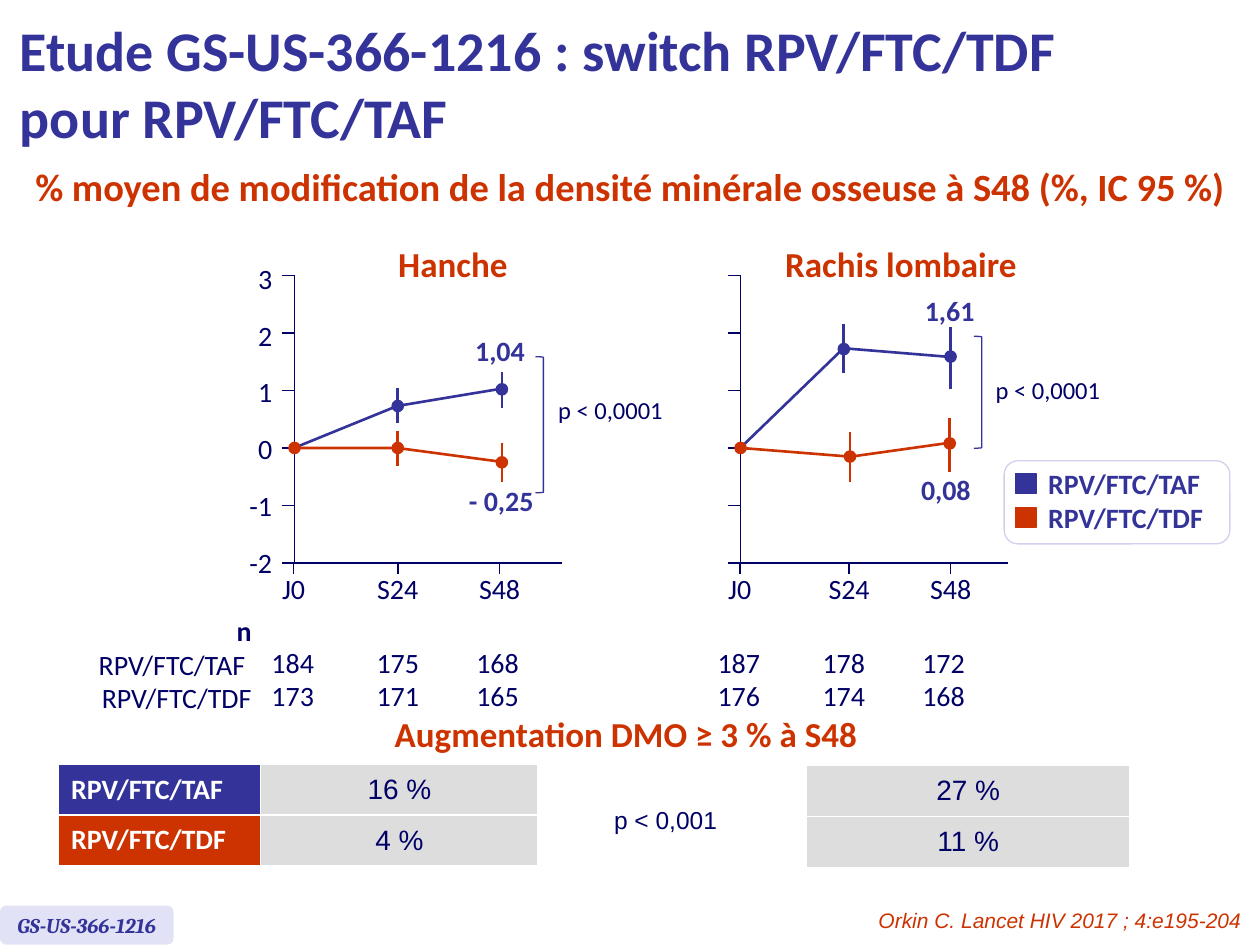
import pptx
import pptx.util
import pptx.dml.color
import pptx.enum.shapes
import pptx.enum.text
import pptx.oxml.ns
from lxml import etree

Pt = pptx.util.Pt
SHAPE = pptx.enum.shapes.MSO_SHAPE
ALIGN = pptx.enum.text.PP_ALIGN
ANCHOR = pptx.enum.text.MSO_ANCHOR
qn = pptx.oxml.ns.qn

COLORS = {"navy": "000066", "taf": "333399", "tdf": "CC3300", "grey": "DDDDDD",
          "white": "FFFFFF", "lilac": "E2E2F6", "edge": "D0D0F0"}
ZERO_Y, UNIT = 256, 32.85
BOTTOM = ZERO_Y + 2 * UNIT
N_OFFSETS = (-1, 59, 116)

HIP = {
    "axis": 168.3, "ticks": (-0.5, 59, 117.2), "n": ("184\n173", "175\n171", "168\n165"),
    "series": {"taf": [(0, 0), (59, 0.73, 0.43, 1.04), (118.5, 1.02, 0.69, 1.33)],
               "tdf": [(0, 0), (59, 0, -0.32, 0.3), (118.5, -0.25, -0.6, 0.08)]},
    "values": [("1,04", 271.5, 190.5), ("- 0,25", 268, 276.5)],
    "bracket": (306, 203.8, 4.5, 77.8), "p": (319, 225.7),
    "title": ("Hanche", 220.5, 78),
}
SPINE = {
    "axis": 423.2, "ticks": (-0.5, 62, 120), "n": ("187\n176", "178\n174", "172\n168"),
    "series": {"taf": [(0, 0), (59, 1.72, 1.3, 2.16), (120, 1.59, 1.02, 2.1)],
               "tdf": [(0, 0), (62.5, -0.15, -0.6, 0.27), (119.5, 0.08, -0.41, 0.52)]},
    "values": [("1,61", 528.5, 168), ("0,08", 526.3, 270)],
    "bracket": (556.5, 192.2, 4.5, 64), "p": (569, 214.4),
    "title": ("Rachis lombaire", 441.6, 148),
}


def rgb(name):
    """Return the colour registered under a name."""
    return pptx.dml.color.RGBColor.from_string(COLORS[name])


def format_text(tf, text, size, color, font="Calibri", bold=False, italic=False, align=ALIGN.LEFT):
    """Fill a text frame and format all its runs."""
    tf.text = text
    for p in tf.paragraphs:
        p.alignment = align
        for r in p.runs:
            r.font.size, r.font.name = Pt(size), font
            r.font.bold, r.font.italic = bold, italic
            r.font.color.rgb = rgb(color)


def add_text(s, text, x, y, w, h, size=16, color="navy", inset=False, wrap=False, **style):
    """Add a text box, with standard insets on request."""
    tf = s.shapes.add_textbox(Pt(x), Pt(y), Pt(w), Pt(h)).text_frame
    tf.word_wrap = wrap
    tf.auto_size = pptx.enum.text.MSO_AUTO_SIZE.SHAPE_TO_FIT_TEXT
    if not inset:
        tf.margin_left = tf.margin_right = tf.margin_top = tf.margin_bottom = 0
    format_text(tf, text, size, color, **style)
    return tf


def add_line(s, x1, y1, x2, y2, color="navy", width=1):
    """Add a straight line."""
    sp = s.shapes.add_connector(pptx.enum.shapes.MSO_CONNECTOR.STRAIGHT,
                                Pt(x1), Pt(y1), Pt(x2), Pt(y2))
    sp.line.color.rgb, sp.line.width = rgb(color), Pt(width)
    etree.SubElement(sp._element.spPr, qn("a:effectLst"))


def paint(sp, fill=None, line=None, width=0.75):
    """Set the fill and outline of a shape."""
    sp.shadow.inherit = False
    if fill:
        sp.fill.solid()
        sp.fill.fore_color.rgb = rgb(fill)
    else:
        sp.fill.background()
    if line:
        sp.line.color.rgb, sp.line.width = rgb(line), Pt(width)
    else:
        sp.line.fill.background()


def add_shape(s, kind, x, y, w, h, fill=None, line=None):
    """Add a painted preset shape."""
    sp = s.shapes.add_shape(kind, Pt(x), Pt(y), Pt(w), Pt(h))
    paint(sp, fill, line)
    return sp


def add_marker(s, x, y, color):
    """Add a round data marker centred on a point."""
    add_shape(s, SHAPE.OVAL, x - 3.25, y - 3.25, 6.5, 6.5, color, color)


def add_curve(s, axis, points, color):
    """Add one series with its error bars and markers."""
    places = [(axis + p[0], ZERO_Y - UNIT * p[1]) for p in points]
    builder = s.shapes.build_freeform(*places[0], scale=12700)
    builder.add_line_segments(places[1:], close=False)
    paint(builder.convert_to_shape(), line=color, width=1.5)
    for (x, y), (_, _, low, high) in zip(places[1:], points[1:]):
        add_line(s, x, ZERO_Y - UNIT * high, x, ZERO_Y - UNIT * low, color, 1.5)
        add_marker(s, x, y, color)


def add_panel(s, panel):
    """Add one plot with axes, curves, labels and head counts."""
    axis = panel["axis"]
    add_line(s, axis, BOTTOM, axis + 153, BOTTOM)
    add_line(s, axis, BOTTOM, axis, 157)
    for value in range(-2, 4):
        y = ZERO_Y - UNIT * value
        add_line(s, axis - 7.2, y, axis, y)
    for dx, label in zip(panel["ticks"], ("J0", "S24", "S48")):
        w = 14 if label == "J0" else 24
        add_line(s, axis + dx, BOTTOM, axis + dx, BOTTOM + 6.5)
        add_text(s, label, axis + dx - w / 2, 326.7, w, 19.4, align=ALIGN.CENTER)
    for dx, counts in zip(N_OFFSETS, panel["n"]):
        add_text(s, counts, axis + dx - 14, 368.6, 28, 38.8, wrap=True, align=ALIGN.CENTER)
    for color, points in panel["series"].items():
        add_curve(s, axis, points, color)
    add_marker(s, axis, ZERO_Y, "tdf")
    for text, x, y in panel["values"]:
        add_text(s, text, x, y, 37 if "-" in text else 29, 19.4, color="taf", bold=True)
    add_shape(s, SHAPE.RIGHT_BRACKET, *panel["bracket"], line="taf")
    add_text(s, "p < 0,0001", *panel["p"], 60.5, 17, size=14)
    title, x, w = panel["title"]
    add_text(s, title, x, 135, w, 31.5, size=20, color="tdf", inset=True, bold=True)


def add_legend(s):
    """Add the framed legend."""
    add_shape(s, SHAPE.ROUNDED_RECTANGLE, 573.8, 263.3, 129, 47.5, "white", "edge")
    for i, (label, color) in enumerate((("RPV/FTC/TAF", "taf"), ("RPV/FTC/TDF", "tdf"))):
        y = 266.8 + 19.5 * i
        add_shape(s, SHAPE.RECTANGLE, 580.5, y + 3.7, 11.5, 11.5, color, color)
        add_text(s, label, 599, y, 90, 19.4, color="taf", bold=True)


def add_borders(cell):
    """Give a cell thin white borders."""
    tc_pr = cell._tc.get_or_add_tcPr()
    for i, side in enumerate(("lnL", "lnR", "lnT", "lnB")):
        ln = etree.Element(qn("a:" + side), w="12700")
        fill = etree.SubElement(ln, qn("a:solidFill"))
        etree.SubElement(fill, qn("a:srgbClr"), val=COLORS["white"])
        tc_pr.insert(i, ln)


def add_table(s, x, y, widths, height, rows):
    """Add a table whose cells are (text, fill, style) triples."""
    table = s.shapes.add_table(len(rows), len(widths), Pt(x), Pt(y),
                               Pt(sum(widths)), Pt(height * len(rows))).table
    table.first_row = table.horz_banding = False
    for column, width in zip(table.columns, widths):
        column.width = Pt(width)
    for i, row in enumerate(rows):
        for j, (text, fill, style) in enumerate(row):
            cell = table.cell(i, j)
            if fill:
                cell.fill.solid()
                cell.fill.fore_color.rgb = rgb(fill)
                cell.vertical_anchor = ANCHOR.MIDDLE
            else:
                cell.fill.background()
            format_text(cell.text_frame, text, **style)
            add_borders(cell)


def add_results(s):
    """Add the response tables and their heading."""
    head = {"size": 16, "color": "white", "bold": True}
    body = {"size": 16, "color": "navy", "font": "Arial", "align": ALIGN.CENTER}
    title = {"size": 20, "color": "tdf", "bold": True, "align": ALIGN.CENTER}
    add_table(s, 33.5, 436.7, (115.5, 158.5), 29, [
        [("RPV/FTC/TAF", "taf", head), ("16 %", "grey", body)],
        [("RPV/FTC/TDF", "tdf", head), ("4 %", "grey", body)]])
    add_table(s, 460.8, 437.3, (185,), 29.2,
              [[("27 %", "grey", body)], [("11 %", "grey", body)]])
    add_table(s, 120, 404.6, (480,), 31, [[("Augmentation DMO ≥ 3 % à S48 ", None, title)]])
    add_text(s, "p < 0,001", 341.1, 456.2, 78.5, 24.5, size=14, inset=True, wrap=True,
             font="Arial", align=ALIGN.CENTER)


def add_frame(s):
    """Add the titles, study tag and citation."""
    tf = add_text(s, "Etude GS-US-366-1216 : switch RPV/FTC/TDF \vpour RPV/FTC/TAF", 4.3, 3.6, 645, 87,
                  size=32, color="taf", inset=True, wrap=True, bold=True)
    tf.vertical_anchor = ANCHOR.MIDDLE
    add_text(s, "% moyen de modification de la densité minérale osseuse à S48 (%, IC 95 %)",
             0, 89.7, 720, 34, size=22, color="tdf", inset=True, wrap=True, bold=True, align=ALIGN.CENTER)
    tag = add_shape(s, SHAPE.ROUNDED_RECTANGLE, 0, 517.5, 99.2, 22.3, "lilac")
    tag.text_frame.word_wrap = False
    tag.text_frame.vertical_anchor = ANCHOR.MIDDLE
    format_text(tag.text_frame, "GS-US-366-1216", 12, "taf", "Cambria", True, True, ALIGN.CENTER)
    add_text(s, "Orkin C. Lancet HIV 2017 ; 4:e195-204", 382.5, 514.8, 334, 21.8, size=12, color="tdf",
             inset=True, wrap=True, font="Arial", italic=True, align=ALIGN.RIGHT)


def main():
    """Build the slide and save it."""
    prs = pptx.Presentation()
    prs.slide_width, prs.slide_height = Pt(720), Pt(540)
    s = prs.slides.add_slide(prs.slide_layouts[6])
    add_frame(s)
    add_results(s)
    for panel in (HIP, SPINE):
        add_panel(s, panel)
    for value in range(-2, 4):
        add_text(s, str(value), 142.5, 246.8 - 32.5 * value, 13, 19.4, align=ALIGN.RIGHT)
    tf = add_text(s, "n\nRPV/FTC/TAF \nRPV/FTC/TDF", 55.2, 350.6, 88.6, 58.2, align=ALIGN.RIGHT)
    tf.paragraphs[0].runs[0].font.bold = True
    add_legend(s)
    prs.save("out.pptx")


if __name__ == "__main__":
    main()
